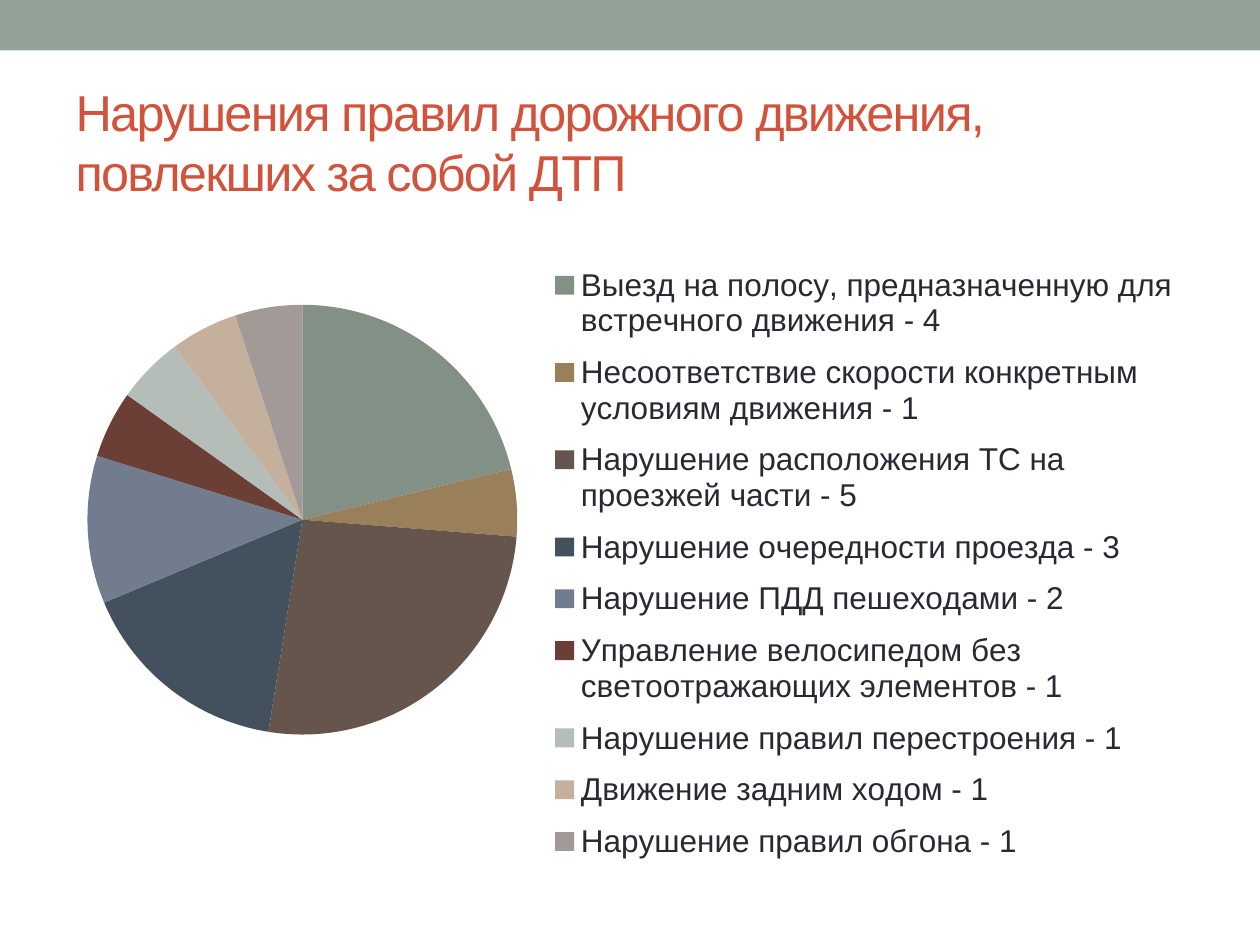
from lxml.etree import SubElement
from pptx import Presentation
from pptx.chart.data import CategoryChartData
from pptx.dml.color import RGBColor
from pptx.enum.chart import XL_CHART_TYPE as ChartType, XL_LEGEND_POSITION as LegendPosition
from pptx.enum.shapes import MSO_SHAPE as Shape
from pptx.enum.text import MSO_ANCHOR as Anchor, MSO_AUTO_SIZE as AutoSize, PP_ALIGN as Align
from pptx.oxml import parse_xml
from pptx.oxml.ns import nsdecls, qn
from pptx.util import Inches, Pt

FONT = "Arial"
BAND = RGBColor(0x93, 0xA2, 0x99)
TITLE_COLOR = RGBColor(0xD2, 0x53, 0x3C)
TEXT_COLOR = RGBColor(0x29, 0x29, 0x34)

TITLE = "Нарушения правил дорожного движения, повлекших за собой ДТП"
# violation, share in percent, slice colour
VIOLATIONS = [
    ("Выезд на полосу, предназначенную для встречного движения - 4", 21, RGBColor(0x83, 0x90, 0x86)),
    ("Несоответствие скорости конкретным условиям движения - 1", 5, RGBColor(0x99, 0x7F, 0x5A)),
    ("Нарушение расположения ТС на проезжей части - 5", 26, RGBColor(0x65, 0x55, 0x4C)),
    ("Нарушение очередности проезда - 3", 16, RGBColor(0x43, 0x50, 0x5D)),
    ("Нарушение ПДД пешеходами - 2", 11, RGBColor(0x71, 0x7D, 0x8E)),
    ("Управление велосипедом без светоотражающих элементов - 1", 5, RGBColor(0x6B, 0x3E, 0x36)),
    ("Нарушение правил перестроения - 1", 5, RGBColor(0xB4, 0xBD, 0xB8)),
    ("Движение задним ходом - 1", 5, RGBColor(0xC4, 0xB0, 0x9C)),
    ("Нарушение правил обгона - 1", 5, RGBColor(0xA1, 0x9A, 0x96)),
]
# left, top, width, height as shares of the chart
PLOT_AREA = (0.02, 0.12, 0.38, 0.64)
LEGEND_AREA = (0.42, 0.04, 0.57, 0.93)


def manual_layout(area, inner=False):
    """Return a c:layout element that fixes a chart part in place."""
    layout = parse_xml(f"<c:layout {nsdecls('c')}><c:manualLayout/></c:layout>")
    settings = [("layoutTarget", "inner")] if inner else []
    settings += [("xMode", "edge"), ("yMode", "edge")]
    settings += zip("xywh", area)
    for name, value in settings:
        SubElement(layout[0], qn(f"c:{name}")).set("val", str(value))
    return layout


def add_band(page, width):
    band = page.shapes.add_shape(Shape.RECTANGLE, 0, 0, width, Inches(0.4))
    band.shadow.inherit = False
    band.fill.solid()
    band.fill.fore_color.rgb = BAND
    band.line.fill.background()


def set_title(page):
    title = page.shapes.title
    title.left, title.top = Inches(0.5), Inches(0.58)
    title.width, title.height = Inches(9), Inches(1.08)
    frame = title.text_frame
    frame.text = TITLE
    frame.word_wrap = True
    frame.auto_size = AutoSize.NONE
    frame.vertical_anchor = Anchor.MIDDLE
    para = frame.paragraphs[0]
    para.alignment = Align.LEFT
    font = para.runs[0].font
    font.name, font.size = FONT, Pt(28.8)
    font.color.rgb = TITLE_COLOR
    font._element.set("spc", "-100")


def add_pie(page):
    data = CategoryChartData()
    data.categories = [name for name, _, _ in VIOLATIONS]
    data.add_series("Series 1", [share for _, share, _ in VIOLATIONS])
    chart = page.shapes.add_chart(
        ChartType.PIE, Inches(0.51), Inches(1.78), Inches(9), Inches(5.33), data
    ).chart
    chart.has_title = False
    chart.font.name, chart.font.size = FONT, Pt(18)
    chart.font.color.rgb = TEXT_COLOR

    plot = chart.plots[0]
    plot.vary_by_categories = True
    for index, (_, _, color) in enumerate(VIOLATIONS):
        fill = plot.series[0].points[index].format.fill
        fill.solid()
        fill.fore_color.rgb = color

    chart.has_legend = True
    legend = chart.legend
    legend.position = LegendPosition.RIGHT
    legend.include_in_layout = False

    plot_area = chart._chartSpace.chart.plotArea
    for layout in plot_area.findall(qn("c:layout")):
        plot_area.remove(layout)
    plot_area.insert(0, manual_layout(PLOT_AREA, inner=True))
    for layout in legend._element.findall(qn("c:layout")):
        legend._element.remove(layout)
    legend._element.find(qn("c:legendPos")).addnext(manual_layout(LEGEND_AREA))


def main():
    deck = Presentation()
    deck.slide_width, deck.slide_height = Inches(10), Inches(7.5)
    page = deck.slides.add_slide(deck.slide_layouts[5])
    add_band(page, deck.slide_width)
    set_title(page)
    add_pie(page)
    deck.save("out.pptx")


if __name__ == "__main__":
    main()
